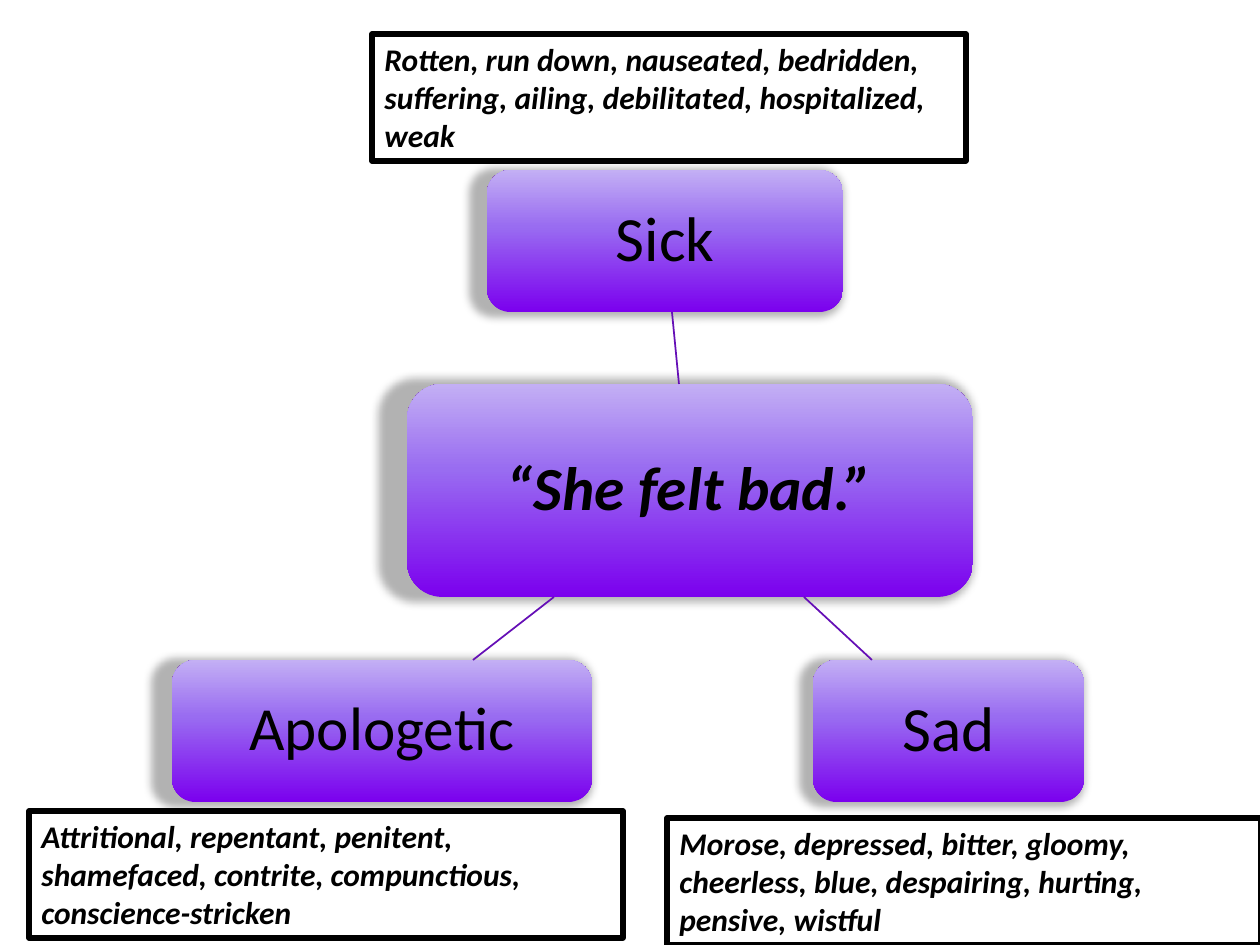
from dataclasses import dataclass

import pptx
import pptx.dml.color
import pptx.enum.shapes
import pptx.enum.text
import pptx.oxml
import pptx.oxml.ns
import pptx.util

UNIT = 914400 / 126  # EMU in one px


@dataclass(frozen=True)
class Theme:
    font: str = "Calibri"
    ink: str = "000000"
    paper: str = "FFFFFF"
    link: str = "650FB6"
    fade: tuple = ((0, "7B00EE"), (60, "996CF1"), (100, "C3AFF4"))
    note: int = 18
    edge: int = 3


@dataclass(frozen=True)
class Node:
    text: str
    left: int
    top: int
    width: int
    height: int
    size: int = 36
    strong: bool = False


@dataclass(frozen=True)
class Link:
    x1: int
    y1: int
    x2: int
    y2: int


@dataclass(frozen=True)
class Note:
    text: str
    left: int
    top: int
    width: int = 594
    height: int = 127


THEME = Theme()
NODES = (
    Node("“She felt bad.”", 407, 384, 566, 213, 35, True),
    Node("Sick", 487, 170, 356, 142),
    Node("Sad", 813, 660, 271, 142),
    Node("Apologetic", 172, 660, 420, 142, 35),
)
LINKS = (
    Link(679, 384, 672, 312),
    Link(804, 597, 872, 660),
    Link(554, 597, 473, 660),
)
NOTES = (
    Note("Rotten, run down, nauseated, bedridden, suffering, ailing, "
         "debilitated, hospitalized, weak", 372, 34),
    Note("Morose, depressed, bitter, gloomy, cheerless, blue, despairing, "
         "hurting, pensive, wistful", 667, 818),
    Note("Attritional, repentant, penitent, shamefaced, contrite, "
         "compunctious, conscience-stricken", 29, 811),
)


def px(*vals: int) -> list[int]:
    return [round(val * UNIT) for val in vals]


def rgb(code: str) -> pptx.dml.color.RGBColor:
    return pptx.dml.color.RGBColor.from_string(code)


def xml(body: str):
    """Turn a DrawingML element, given without its namespace, into a tree."""
    space = pptx.oxml.ns.nsdecls("a")
    name, rest = body[1:].split(">", 1)
    return pptx.oxml.parse_xml(f"<{name} {space}>{rest}")


def write(para, text: str, size: int, strong: bool) -> None:
    run = para.add_run()
    run.text = text
    font = run.font
    font.name = THEME.font
    font.size = pptx.util.Pt(size)
    font.bold = font.italic = strong
    font.color.rgb = rgb(THEME.ink)


def shade(shape) -> None:
    """Give a shape the theme's upward fade and its widened soft shadow."""
    shape.line.fill.background()
    shape.fill.gradient()
    shape.fill.gradient_angle = 90
    props = shape.element.spPr
    old = props.find(".//" + pptx.oxml.ns.qn("a:gsLst"))
    stops = "".join(
        f'<a:gs pos="{pos * 1000}"><a:srgbClr val="{code}"/></a:gs>'
        for pos, code in THEME.fade)
    old.getparent().replace(old, xml(f"<a:gsLst>{stops}</a:gsLst>"))
    props.append(xml(
        '<a:effectLst><a:outerShdw blurRad="63500" dist="38100" dir="5400000" '
        'sx="105000" sy="105000" algn="br" rotWithShape="0">'
        f'<a:srgbClr val="{THEME.ink}"><a:alpha val="30000"/></a:srgbClr>'
        '</a:outerShdw></a:effectLst>'))


def draw_node(slide, node: Node) -> None:
    shape = slide.shapes.add_shape(
        pptx.enum.shapes.MSO_SHAPE.ROUNDED_RECTANGLE,
        *px(node.left, node.top, node.width, node.height))
    shade(shape)
    frame = shape.text_frame
    frame.word_wrap = True
    frame.vertical_anchor = pptx.enum.text.MSO_ANCHOR.MIDDLE
    para = frame.paragraphs[0]
    para.alignment = pptx.enum.text.PP_ALIGN.CENTER
    para.line_spacing = 0.9
    write(para, node.text, node.size, node.strong)


def draw_link(slide, link: Link) -> None:
    line = slide.shapes.add_connector(
        pptx.enum.shapes.MSO_CONNECTOR.STRAIGHT,
        *px(link.x1, link.y1, link.x2, link.y2))
    line.line.color.rgb = rgb(THEME.link)
    line.line.width = pptx.util.Pt(1)
    line.element.spPr.append(xml("<a:effectLst></a:effectLst>"))


def draw_note(slide, note: Note) -> None:
    box = slide.shapes.add_textbox(
        *px(note.left, note.top, note.width, note.height))
    box.fill.solid()
    box.fill.fore_color.rgb = rgb(THEME.paper)
    box.line.color.rgb = rgb(THEME.ink)
    box.line.width = pptx.util.Pt(THEME.edge)
    frame = box.text_frame
    frame.word_wrap = True
    frame.auto_size = pptx.enum.text.MSO_AUTO_SIZE.SHAPE_TO_FIT_TEXT
    write(frame.paragraphs[0], note.text, THEME.note, True)


def main() -> None:
    deck = pptx.Presentation()
    deck.slide_width, deck.slide_height = px(1260, 945)
    slide = deck.slides.add_slide(deck.slide_layouts[6])
    for node in NODES:
        draw_node(slide, node)
    for link in LINKS:
        draw_link(slide, link)
    for note in NOTES:
        draw_note(slide, note)
    deck.save("out.pptx")


if __name__ == "__main__":
    main()
